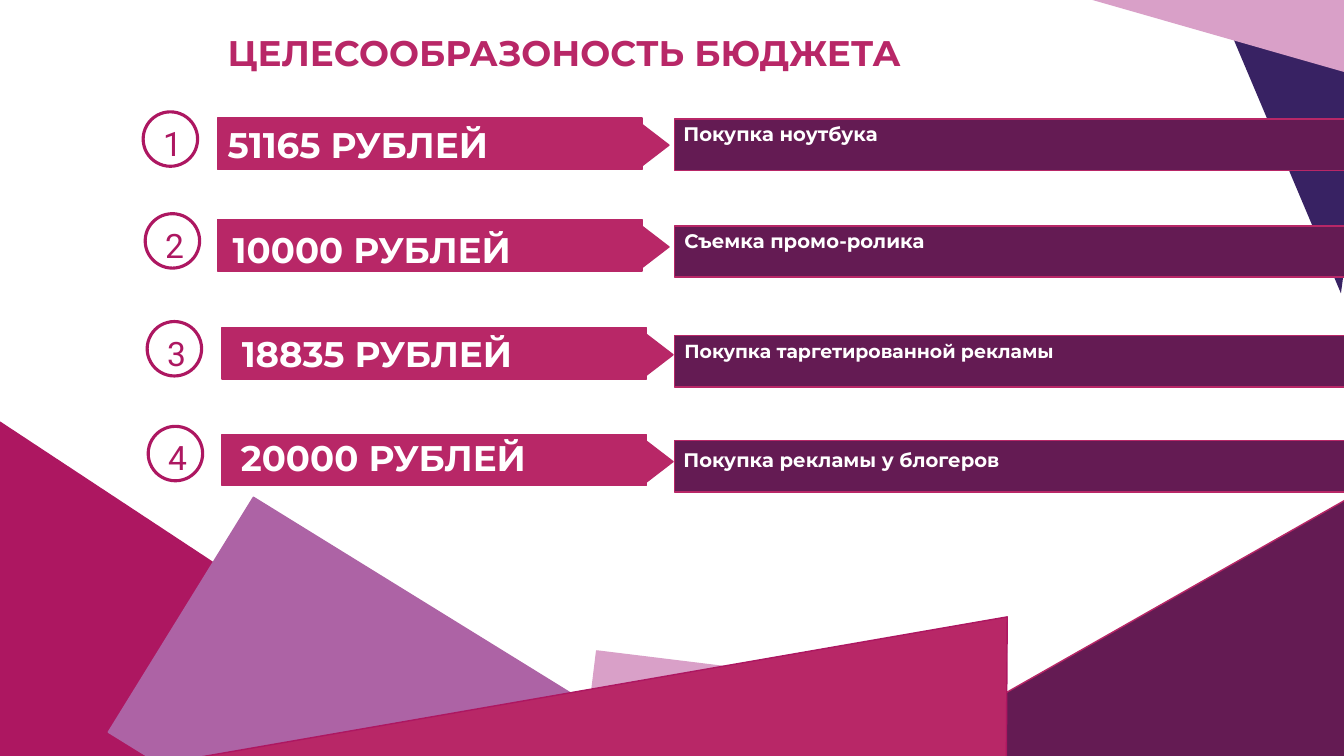
from pptx import Presentation
from pptx.dml.color import RGBColor
from pptx.enum.shapes import MSO_SHAPE
from pptx.enum.text import MSO_AUTO_SIZE
from pptx.util import Pt

CELL = 9144
COLUMNS, ROWS = 1333, 750
ROSE, CRIMSON, PLUM = "B82767", "AD1761", "641B53"
ORCHID, PINK, INDIGO, WHITE = "AD63A5", "D9A0C8", "382263", "FFFFFF"

deck = Presentation()
deck.slide_width, deck.slide_height = COLUMNS * CELL, ROWS * CELL
slide = deck.slides.add_slide(deck.slide_layouts[6])
color = RGBColor.from_string


def block(kind, left, top, width, height, fill, outline, weight=1, turn=0):
    shape = slide.shapes.add_shape(kind, left * CELL, top * CELL, width * CELL, height * CELL)
    shape.shadow.inherit = False
    shape.fill.solid()
    shape.fill.fore_color.rgb = color(fill)
    shape.line.color.rgb = color(outline)
    shape.line.width = Pt(weight)
    shape.rotation = turn


def write(text, left, top, width, height, size, ink, font="Montserrat", bold=True, wrap=True):
    frame = slide.shapes.add_textbox(left * CELL, top * CELL, width * CELL, height * CELL).text_frame
    frame.word_wrap = wrap
    frame.auto_size = MSO_AUTO_SIZE.SHAPE_TO_FIT_TEXT
    frame.text = text
    style = frame.paragraphs[0].runs[0].font
    style.name, style.size, style.bold = font, Pt(size), bold
    style.color.rgb = color(ink)


for left, top, width, height, turn, fill, outline in [
    (-209, 495, 565, 280, 33.4, CRIMSON, CRIMSON),
    (139, 615, 541, 274, 31.7, ORCHID, ORCHID),
    (622, 619, 369, 478, 277, PINK, PINK),
    (802, 619, 706, 280, 330.4, PLUM, ROSE),
]:
    block(MSO_SHAPE.RECTANGLE, left, top, width, height, fill, outline, turn=turn)

for corners, fill, outline in [
    ([(1330, 291), (1218, 26), (1363, 47)], INDIGO, None),
    ([(1052, -9), (1433, 100), (1252, -123)], PINK, None),
    ([(999, 612), (55, 776), (998, 776)], ROSE, CRIMSON),
]:
    builder = slide.shapes.build_freeform(*corners[0], scale=CELL)
    builder.add_line_segments(corners[1:], close=True)
    shard = builder.convert_to_shape()
    shard.shadow.inherit = False
    shard.fill.solid()
    shard.fill.fore_color.rgb = color(fill)
    if outline:
        shard.line.color.rgb = color(outline)
        shard.line.width = Pt(1)
    else:
        shard.line.fill.background()

write("ЦЕЛЕСООБРАЗОНОСТЬ БЮДЖЕТА", 216, 26, 1025, 53, 25.4, ROSE)

budget = [
    ("51165 РУБЛЕЙ", (216, 117, 283), "Покупка ноутбука", (668, 116, 665), 14,
     (142, 111), (216, 117), 118),
    ("10000 РУБЛЕЙ", (221, 221, 301), "Съемка промо-ролика", (669, 222, 665), 14,
     (144, 212), (216, 218), 224),
    ("18835 РУБЛЕЙ", (230, 324, 293), "Покупка таргетированной рекламы", (669, 332, 712), 13.5,
     (146, 319), (220, 325), 333),
    ("20000 РУБЛЕЙ", (229, 428, 308), "Покупка рекламы у блогеров", (668, 439, 665), 14,
     (147, 423), (220, 431), 437),
]
for number, (amount, amount_box, purpose, purpose_box, purpose_size,
             badge, bar, purpose_top) in enumerate(budget, 1):
    badge_left, badge_top = badge
    bar_left, bar_top = bar
    block(MSO_SHAPE.RECTANGLE, bar_left, bar_top, 421, 51, ROSE, ROSE)
    block(MSO_SHAPE.ISOSCELES_TRIANGLE, bar_left + 412, bar_top + 13, 43, 28, ROSE, ROSE, turn=90)
    block(MSO_SHAPE.RECTANGLE, 669, purpose_top, 665, 51, PLUM, ROSE)
    block(MSO_SHAPE.OVAL, badge_left, badge_top, 54, 54, WHITE, CRIMSON, 2.25)
    write(str(number), badge_left + 10, badge_top + 6, 54, 50, 24, CRIMSON, "Roboto", False)
    write(amount, *amount_box, 53, 25.4, WHITE, wrap=False)
    write(purpose, *purpose_box, 34, purpose_size, WHITE)

deck.save("out.pptx")
